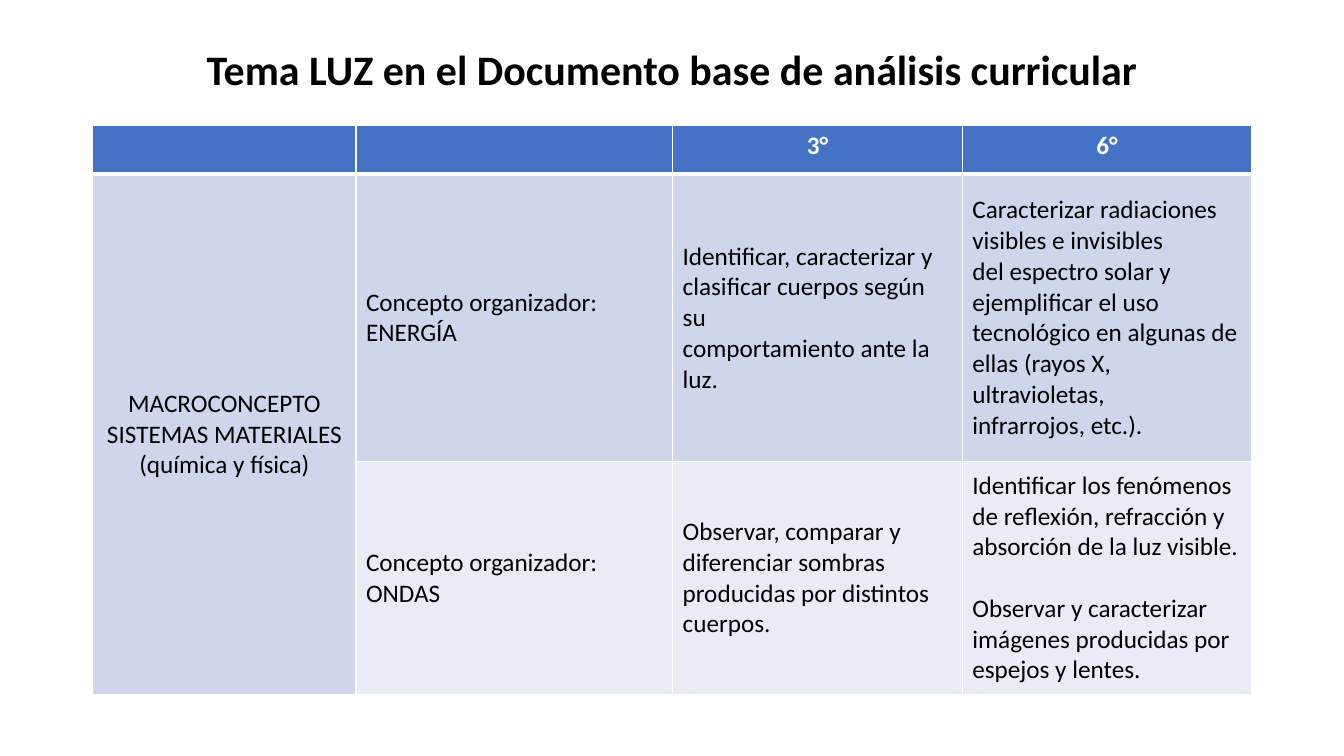
from lxml.etree import SubElement
from pptx import Presentation
from pptx.dml.color import RGBColor
from pptx.enum.text import MSO_ANCHOR as Anchor, PP_ALIGN as Align
from pptx.oxml.ns import qn
from pptx.util import Cm, Pt

FONT = "Calibri"
BLACK, WHITE = "000000", "FFFFFF"
HEADER_BLUE, ENERGY_BLUE, WAVES_BLUE = "4472C4", "CFD5EA", "E9EBF5"

MARGIN, CONTENT_WIDTH = 2.34, 29.21
COLUMN_WIDTHS = (6.63, 7.98, 7.3, 7.3)
ROW_HEIGHTS = (1.24, 7.24, 5.87)
ROW_FILLS = (HEADER_BLUE, ENERGY_BLUE, WAVES_BLUE)

# One string per cell; a line break starts a new paragraph
CURRICULUM = (
    ("", "", "3°", "6°"),
    (
        "MACROCONCEPTO SISTEMAS MATERIALES\n(química y física)",
        "Concepto organizador: ENERGÍA",
        "Identificar, caracterizar y\nclasificar cuerpos según su\n"
        "comportamiento ante la luz.",
        "Caracterizar radiaciones\nvisibles e invisibles\n"
        "del espectro solar y\nejemplificar el uso\n"
        "tecnológico en algunas de\nellas (rayos X, ultravioletas,\n"
        "infrarrojos, etc.).",
    ),
    (
        "",
        "Concepto organizador: ONDAS",
        "Observar, comparar y diferenciar sombras producidas por "
        "distintos cuerpos.",
        "Identificar los fenómenos de reflexión, refracción y absorción "
        "de la luz visible.\n"
        "Observar y caracterizar imágenes producidas por espejos y lentes.",
    ),
)


def rgb(hex_color):
    return RGBColor.from_string(hex_color)


def format_text(frame, size, color, bold, align):
    for paragraph in frame.paragraphs:
        paragraph.alignment = align
        for run in paragraph.runs:
            run.font.name = FONT
            run.font.size = Pt(size)
            run.font.bold = bold
            run.font.color.rgb = rgb(color)


def add_title(slide, title):
    box = slide.shapes.add_textbox(Cm(MARGIN), Cm(1.02), Cm(CONTENT_WIDTH), Cm(1.6))
    frame = box.text_frame
    frame.word_wrap = True
    frame.vertical_anchor = Anchor.MIDDLE
    frame.text = title
    frame.paragraphs[0].line_spacing = 0.9
    format_text(frame, 30, BLACK, True, Align.CENTER)


def set_borders(cell, widths):
    properties = cell._tc.get_or_add_tcPr()
    for side, width in widths.items():
        line = SubElement(properties, qn(f"a:ln{side}"), w=str(Pt(width)))
        line_fill = SubElement(line, qn("a:solidFill"))
        SubElement(line_fill, qn("a:srgbClr"), val=WHITE)


def style_cell(cell, text, row, column):
    header = row == 0
    bottom = 3 if header else 1
    top = 3 if row == 1 else 1
    set_borders(cell, {"L": 1, "R": 1, "T": top, "B": bottom})
    cell.fill.solid()
    cell.fill.fore_color.rgb = rgb(ROW_FILLS[row])
    cell.vertical_anchor = Anchor.TOP if header else Anchor.MIDDLE
    cell.text_frame.text = text
    align = Align.CENTER if header or column == 0 else Align.LEFT
    format_text(cell.text_frame, 18, WHITE if header else BLACK, header, align)


def add_curriculum_table(slide):
    table = slide.shapes.add_table(
        len(ROW_HEIGHTS), len(COLUMN_WIDTHS),
        Cm(MARGIN), Cm(3.15), Cm(CONTENT_WIDTH), Cm(sum(ROW_HEIGHTS)),
    ).table
    for column, width in zip(table.columns, COLUMN_WIDTHS):
        column.width = Cm(width)
    for row, height in zip(table.rows, ROW_HEIGHTS):
        row.height = Cm(height)
    for r, texts in enumerate(CURRICULUM):
        for c, text in enumerate(texts):
            style_cell(table.cell(r, c), text, r, c)

    # The macroconcept covers both organising concepts
    table.cell(1, 0).merge(table.cell(2, 0))

    # One line of space between the two goals on waves for 6°
    table.cell(2, 3).text_frame.paragraphs[1].space_before = Pt(22)


def main():
    deck = Presentation()
    deck.slide_width, deck.slide_height = Cm(33.87), Cm(19.05)
    slide = deck.slides.add_slide(deck.slide_layouts[6])
    add_title(slide, "Tema LUZ en el Documento base de análisis curricular")
    add_curriculum_table(slide)
    deck.save("out.pptx")


if __name__ == "__main__":
    main()
